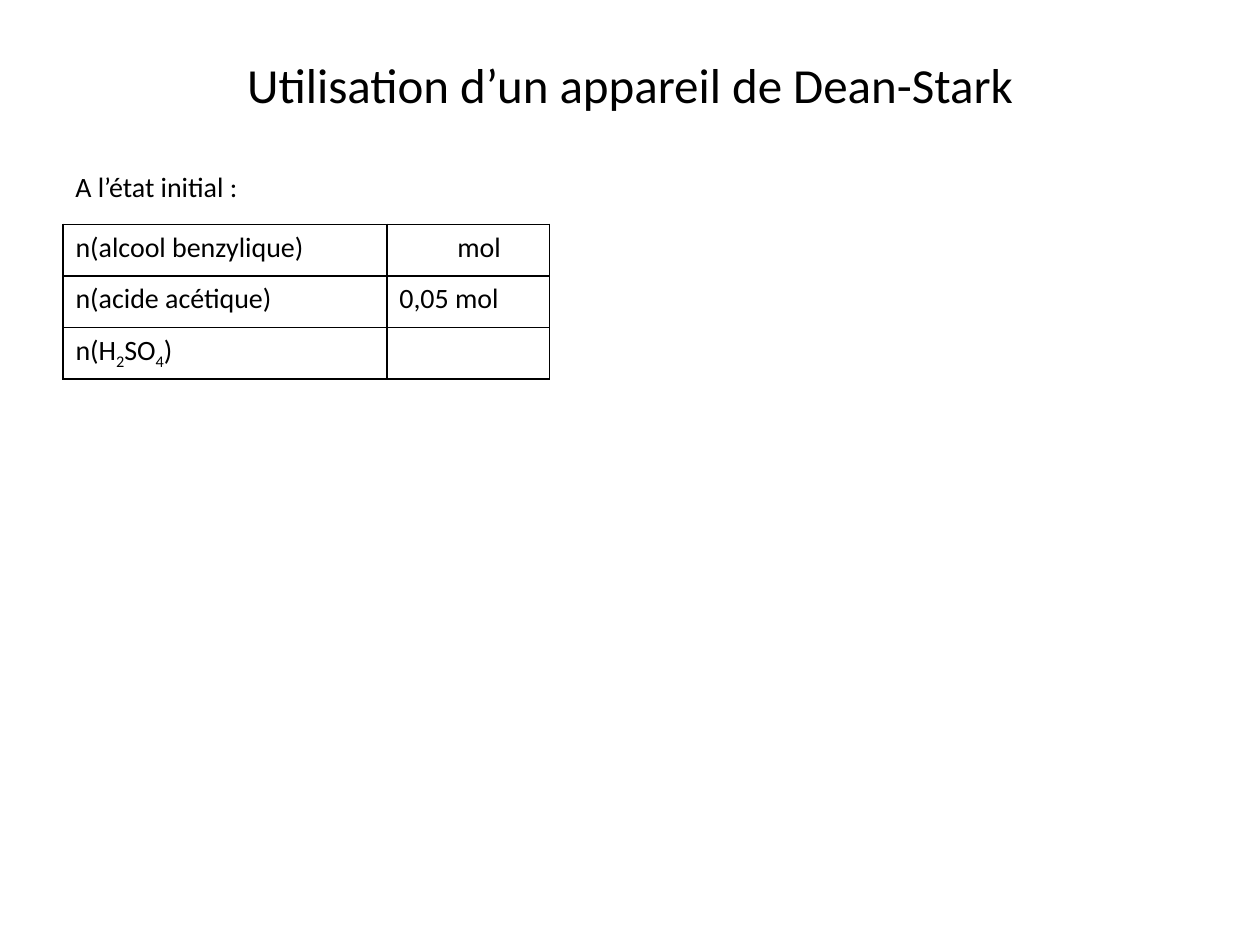
"""Build the slide on the initial state of a Dean-Stark setup."""
from dataclasses import dataclass

import lxml.etree
import pptx
import pptx.dml.color
import pptx.enum.text
import pptx.oxml.ns
import pptx.util

WIDTH, HEIGHT = 10, 7.5
MARGIN = 0.05 * WIDTH
INK = "000000"
ROW_HEIGHT = 0.41
COLUMN_WIDTHS = (2.57, 1.29)
CELL_INSET = 0.1
BLANK_VALUE_INSET = 0.56
BORDER_POINTS = 1
SUBSCRIPT = "-25000"
ALIGN = pptx.enum.text.PP_ALIGN
ANCHOR = pptx.enum.text.MSO_ANCHOR


@dataclass(frozen=True)
class Caption:
    """A line of text with its box in inches."""

    wording: str
    left: float
    top: float
    width: float
    height: float
    size: int
    align: ALIGN = ALIGN.LEFT
    anchor: ANCHOR = ANCHOR.TOP


@dataclass(frozen=True)
class Quantity:
    """A species, split at its subscript digits, with its amount."""

    species: tuple[str, ...]
    amount: str
    inset: float = CELL_INSET


CAPTIONS = (
    Caption("Utilisation d’un appareil de Dean-Stark", MARGIN, 0.04,
            WIDTH - 2 * MARGIN, HEIGHT / 6, 28, ALIGN.CENTER, ANCHOR.MIDDLE),
    Caption("A l’état initial :", MARGIN, 1.3, 0.3 * WIDTH, 0.37, 16),
)
QUANTITIES = (
    Quantity(("n(alcool benzylique)",), "mol", BLANK_VALUE_INSET),
    Quantity(("n(acide acétique)",), "0,05 mol"),
    Quantity(("n(H", "2", "SO", "4", ")"), ""),
)


def colour(value: str) -> pptx.dml.color.RGBColor:
    """Turn a hex string into a colour."""
    return pptx.dml.color.RGBColor.from_string(value)


def write(paragraph, wording: str, size: int, subscript: bool = False) -> None:
    """Add one formatted run to a paragraph."""
    run = paragraph.add_run()
    run.text = wording
    formats = {"name": "Calibri", "size": pptx.util.Pt(size), "bold": False}
    for attribute, value in formats.items():
        setattr(run.font, attribute, value)
    run.font.color.rgb = colour(INK)
    if subscript:
        run._r.get_or_add_rPr().set("baseline", SUBSCRIPT)


def draw_caption(slide, caption: Caption) -> None:
    """Place a caption on the slide."""
    box = (caption.left, caption.top, caption.width, caption.height)
    frame = slide.shapes.add_textbox(*map(pptx.util.Inches, box)).text_frame
    formats = {"word_wrap": True, "vertical_anchor": caption.anchor}
    for attribute, value in formats.items():
        setattr(frame, attribute, value)
    frame.paragraphs[0].alignment = caption.align
    write(frame.paragraphs[0], caption.wording, caption.size)


def style_cell(cell, inset: float) -> None:
    """Give a cell black borders, no fill and its left inset."""
    qn = pptx.oxml.ns.qn
    properties = cell._tc.get_or_add_tcPr()
    for side in ("lnL", "lnR", "lnT", "lnB"):
        line = lxml.etree.SubElement(properties, qn(f"a:{side}"))
        line.set("w", str(pptx.util.Pt(BORDER_POINTS)))
        fill = lxml.etree.SubElement(line, qn("a:solidFill"))
        lxml.etree.SubElement(fill, qn("a:srgbClr")).set("val", INK)
    cell.fill.background()
    cell.margin_left = pptx.util.Inches(inset)


def draw_quantities(slide, quantities: tuple[Quantity, ...]) -> None:
    """Draw the table of initial quantities."""
    box = (MARGIN, 1.78, sum(COLUMN_WIDTHS), ROW_HEIGHT * len(quantities))
    table = slide.shapes.add_table(
        len(quantities), len(COLUMN_WIDTHS), *map(pptx.util.Inches, box)
    ).table
    for attribute, value in {"first_row": False, "horz_banding": False}.items():
        setattr(table, attribute, value)
    for column, width in zip(table.columns, COLUMN_WIDTHS):
        column.width = pptx.util.Inches(width)
    for row, quantity in zip(table.rows, quantities):
        row.height = pptx.util.Inches(ROW_HEIGHT)
        species, amount = row.cells
        style_cell(species, CELL_INSET)
        style_cell(amount, quantity.inset)
        for part in quantity.species:
            write(species.text_frame.paragraphs[0], part, 16, part.isdigit())
        if quantity.amount:
            write(amount.text_frame.paragraphs[0], quantity.amount, 16)


def main() -> None:
    """Build and save the slide."""
    deck = pptx.Presentation()
    deck.slide_width = pptx.util.Inches(WIDTH)
    deck.slide_height = pptx.util.Inches(HEIGHT)
    slide = deck.slides.add_slide(deck.slide_layouts[6])
    for caption in CAPTIONS:
        draw_caption(slide, caption)
    draw_quantities(slide, QUANTITIES)
    deck.save("out.pptx")


if __name__ == "__main__":
    main()
